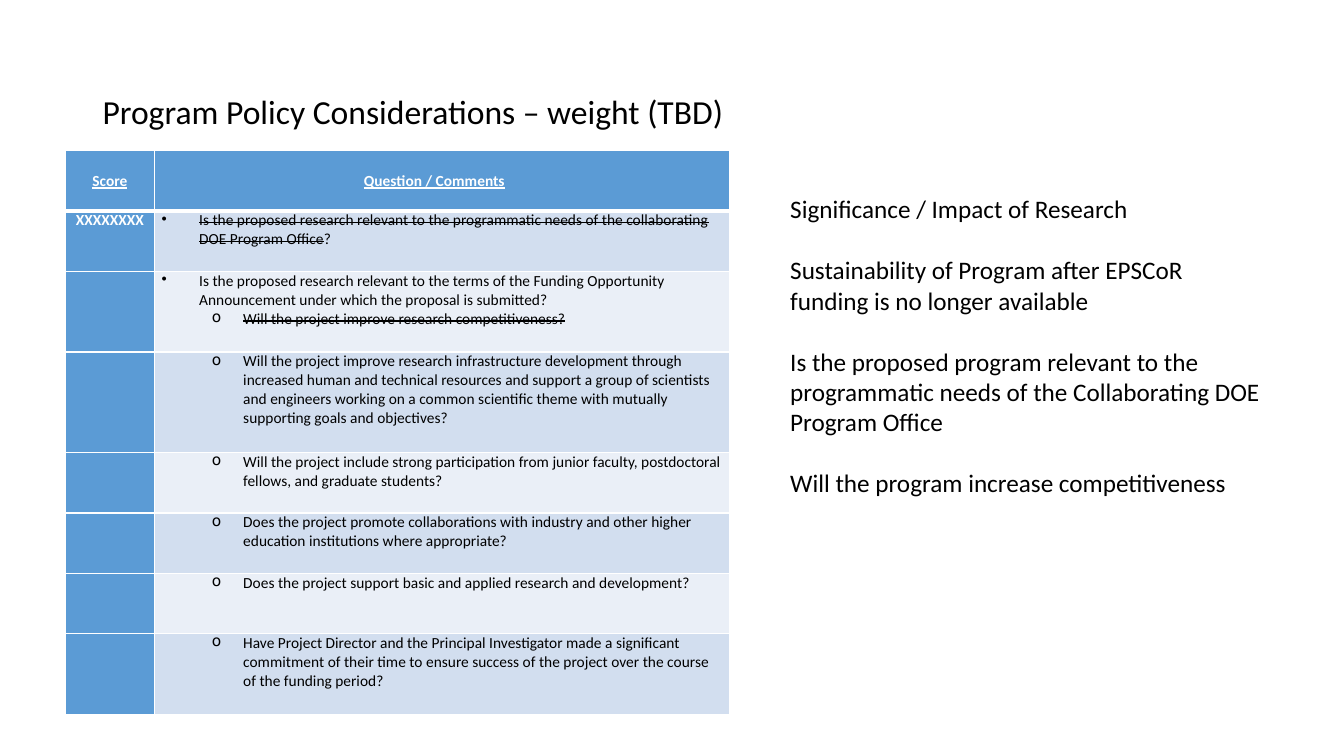
from dataclasses import dataclass
from pptx import Presentation
from pptx.dml.color import RGBColor
from pptx.enum.text import MSO_ANCHOR, MSO_AUTO_SIZE, PP_ALIGN
from pptx.oxml import parse_xml
from pptx.oxml.ns import nsdecls
from pptx.util import Cm, Pt


@dataclass(frozen=True)
class Theme:
    font: str = "Calibri"
    ink: str = "000000"
    white: str = "FFFFFF"
    blue: str = "5B9BD5"
    bands: tuple = ("D2DEEF", "EAEFF7")
    title: int = 24
    body: int = 18
    cell: int = 11


theme = Theme()


def apply(item, values):
    for name, value in values.items():
        setattr(item, name, value)


def write(para, text, size, ink, **more):
    run = para.add_run()
    run.text = text
    apply(run.font, {"name": theme.font, "size": Pt(size), **more})
    run.font.color.rgb = RGBColor.from_string(ink)
    return run


deck = Presentation()
apply(deck, {"slide_width": Cm(33.87), "slide_height": Cm(19.05)})
slide = deck.slides.add_slide(deck.slide_layouts[1])

title = slide.shapes.title
apply(title, {"left": Cm(2.33), "top": Cm(1.01), "width": Cm(29.21), "height": Cm(3.68)})
apply(title.text_frame, {"vertical_anchor": MSO_ANCHOR.MIDDLE, "auto_size": MSO_AUTO_SIZE.NONE})
head = title.text_frame.paragraphs[0]
apply(head, {"alignment": PP_ALIGN.LEFT, "line_spacing": 0.9})
write(head, "Program Policy Considerations – weight (TBD)", theme.title, theme.ink)

rows = [
    (1.52, [(0, "Is the proposed research relevant to the programmatic needs of the collaborating DOE Program Office", True, "?")]),
    (2.03, [(0, "Is the proposed research relevant to the terms of the Funding Opportunity Announcement under which the proposal is submitted?", False, ""),
            (1, "Will the project improve research competitiveness?", True, "")]),
    (2.54, [(1, "Will the project improve research infrastructure development through increased human and technical resources and support a group of scientists and engineers working on a common scientific theme with mutually supporting goals and objectives?", False, "")]),
    (1.52, [(1, "Will the project include strong participation from junior faculty, postdoctoral fellows, and graduate students?", False, "")]),
    (1.52, [(1, "Does the project promote collaborations with industry and other higher education institutions where appropriate?", False, "")]),
    (1.52, [(1, "Does the project support basic and applied research and development?", False, "")]),
    (2.03, [(1, "Have Project Director and the Principal Investigator made a significant commitment of their time to ensure success of the project over the course of the funding period?", False, "")]),
]
levels = [("•", 0.95, -0.95), ("o", 2.06, -0.79)]
tall = [1.52] + [height for height, _ in rows]
wide = [2.24, 14.5]

table = slide.shapes.add_table(
    len(tall), 2, Cm(1.65), Cm(3.8), Cm(sum(wide)), Cm(sum(tall))).table
for column, width in zip(table.columns, wide):
    column.width = Cm(width)
for row, height in zip(table.rows, tall):
    row.height = Cm(height)

for r, row in enumerate(table.rows):
    for c, cell in enumerate(row.cells):
        apply(cell, {"margin_left": Cm(0.18), "margin_right": Cm(0.18),
                     "margin_top": 0, "margin_bottom": 0})
        shade = theme.blue if r == 0 or c == 0 else theme.bands[(r - 1) % 2]
        cell.fill.solid()
        cell.fill.fore_color.rgb = RGBColor.from_string(shade)
        for i, side in enumerate("LRTB"):
            thick = 3 if (r, side) in ((0, "B"), (1, "T")) else 1
            cell._tc.get_or_add_tcPr().insert(i, parse_xml(
                f'<a:ln{side} {nsdecls("a")} w="{Pt(thick)}"><a:solidFill>'
                f'<a:srgbClr val="{theme.white}"/></a:solidFill></a:ln{side}>'))

labels = [(0, 0, "Score", True), (0, 1, "Question / Comments", True), (1, 0, "XXXXXXXX", False)]
for r, c, text, under in labels:
    cell = table.cell(r, c)
    cell.vertical_anchor = MSO_ANCHOR.TOP if r else MSO_ANCHOR.MIDDLE
    para = cell.text_frame.paragraphs[0]
    if c == 0:
        para.alignment = PP_ALIGN.CENTER
    else:
        para._p.get_or_add_pPr().set("marL", str(Cm(5.1)))
    write(para, text, theme.cell, theme.white, bold=True, underline=under)

for r, (_, items) in enumerate(rows, 1):
    frame = table.cell(r, 1).text_frame
    for i, (level, text, struck, tail) in enumerate(items):
        para = frame.add_paragraph() if i else frame.paragraphs[0]
        para.level = level
        mark, left, hang = levels[level]
        props = para._p.get_or_add_pPr()
        props.set("marL", str(Cm(left)))
        props.set("indent", str(Cm(hang)))
        props.append(parse_xml(f'<a:buChar {nsdecls("a")} char="{mark}"/>'))
        run = write(para, text, theme.cell, theme.ink, bold=False)
        if struck:
            run.font._element.set("strike", "sngStrike")
        if tail:
            write(para, tail, theme.cell, theme.ink, bold=False)

body = slide.placeholders[1]
apply(body, {"left": Cm(19.66), "top": Cm(4.75), "width": Cm(12.47), "height": Cm(7.95)})
apply(body.text_frame, {"word_wrap": True, "auto_size": MSO_AUTO_SIZE.SHAPE_TO_FIT_TEXT})
points = [
    "Significance / Impact of Research",
    "Sustainability of Program after EPSCoR funding is no longer available",
    "Is the proposed program relevant to the programmatic needs of the Collaborating DOE Program Office",
    "Will the program increase competitiveness",
]
for i, text in enumerate(points):
    para = body.text_frame.add_paragraph() if i else body.text_frame.paragraphs[0]
    apply(para, {"space_before": Pt(22 if i else 0), "space_after": Pt(0)})
    props = para._p.get_or_add_pPr()
    props.set("marL", "0")
    props.set("indent", "0")
    props.append(parse_xml(f'<a:buNone {nsdecls("a")}/>'))
    write(para, text, theme.body, theme.ink)

deck.save("out.pptx")
